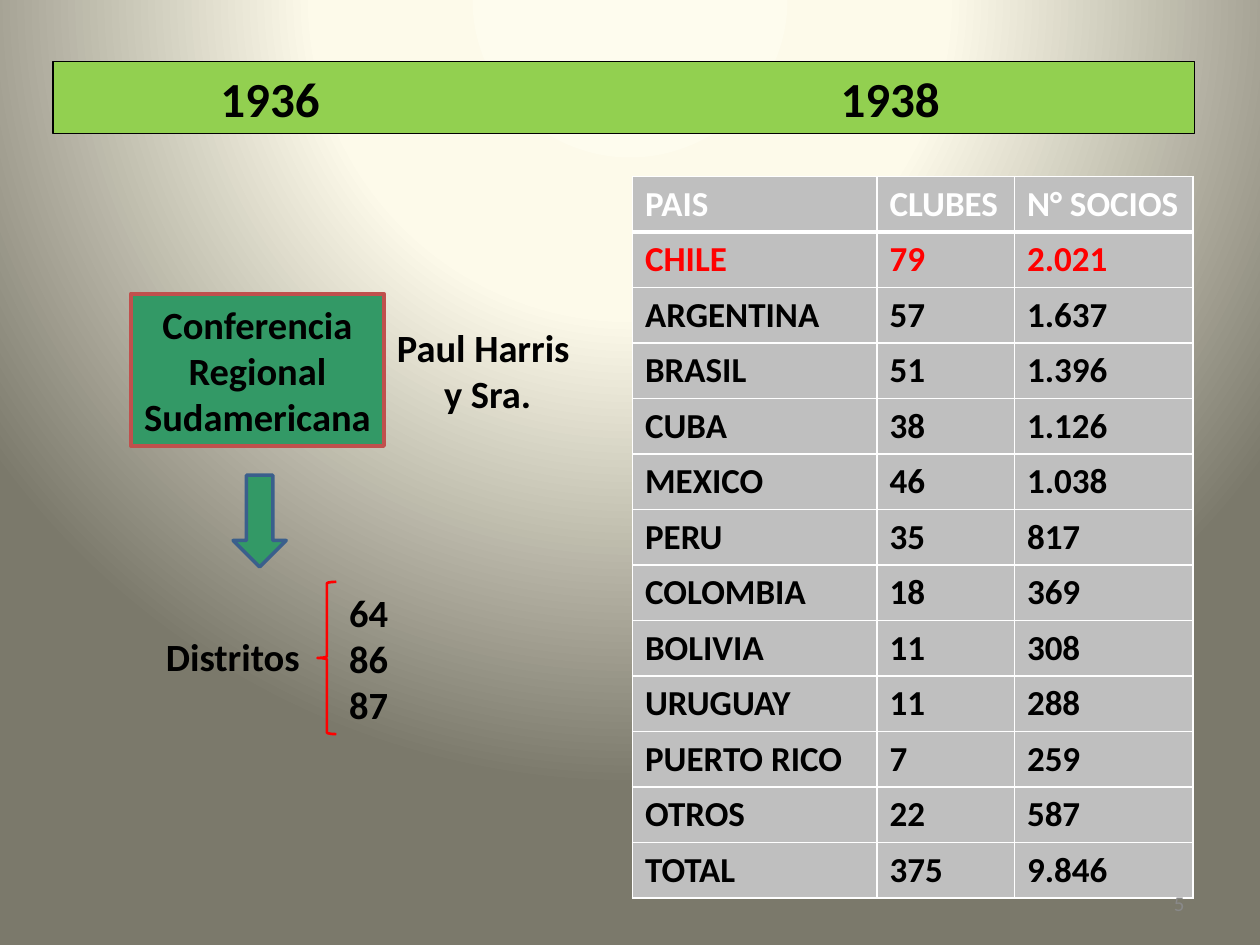
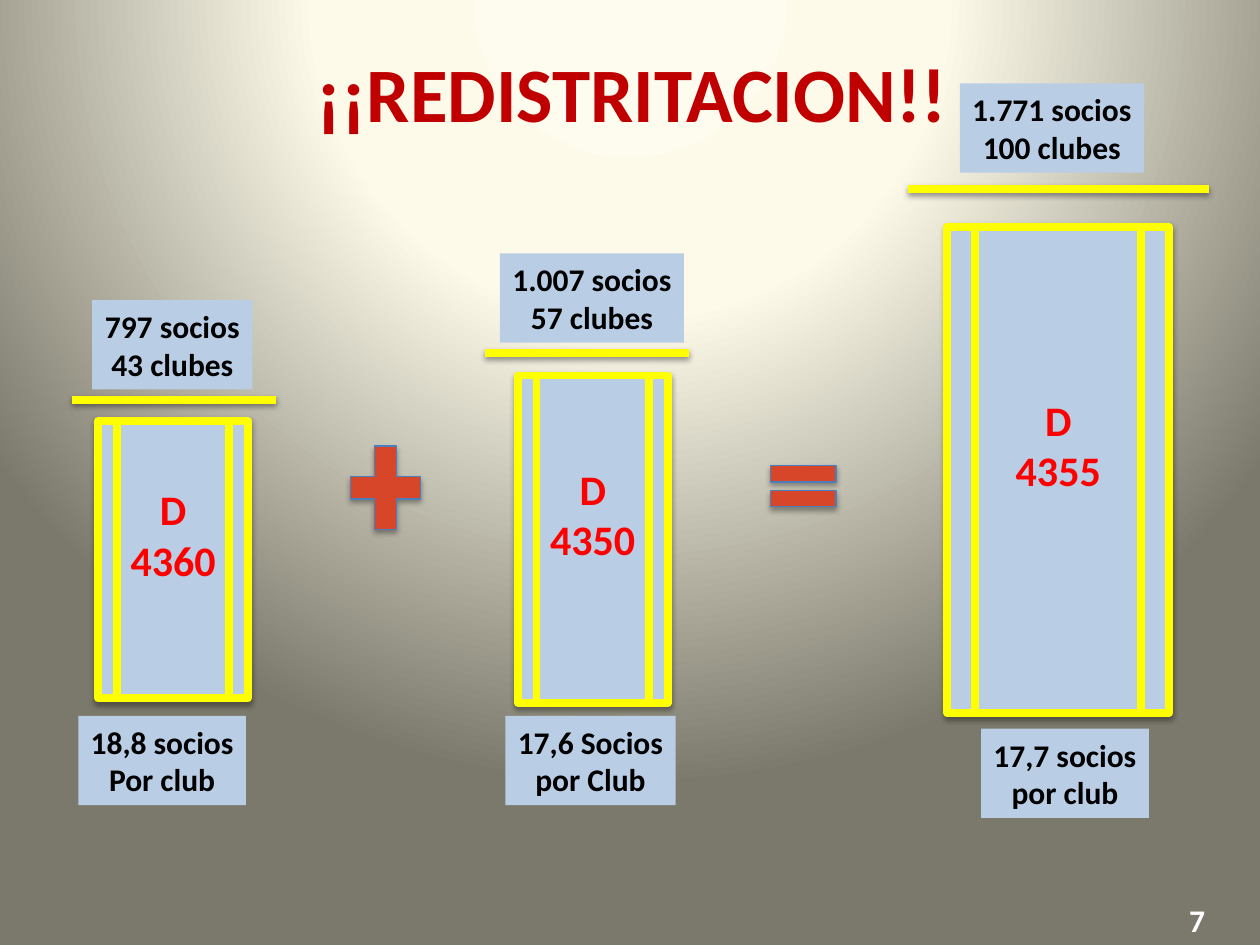
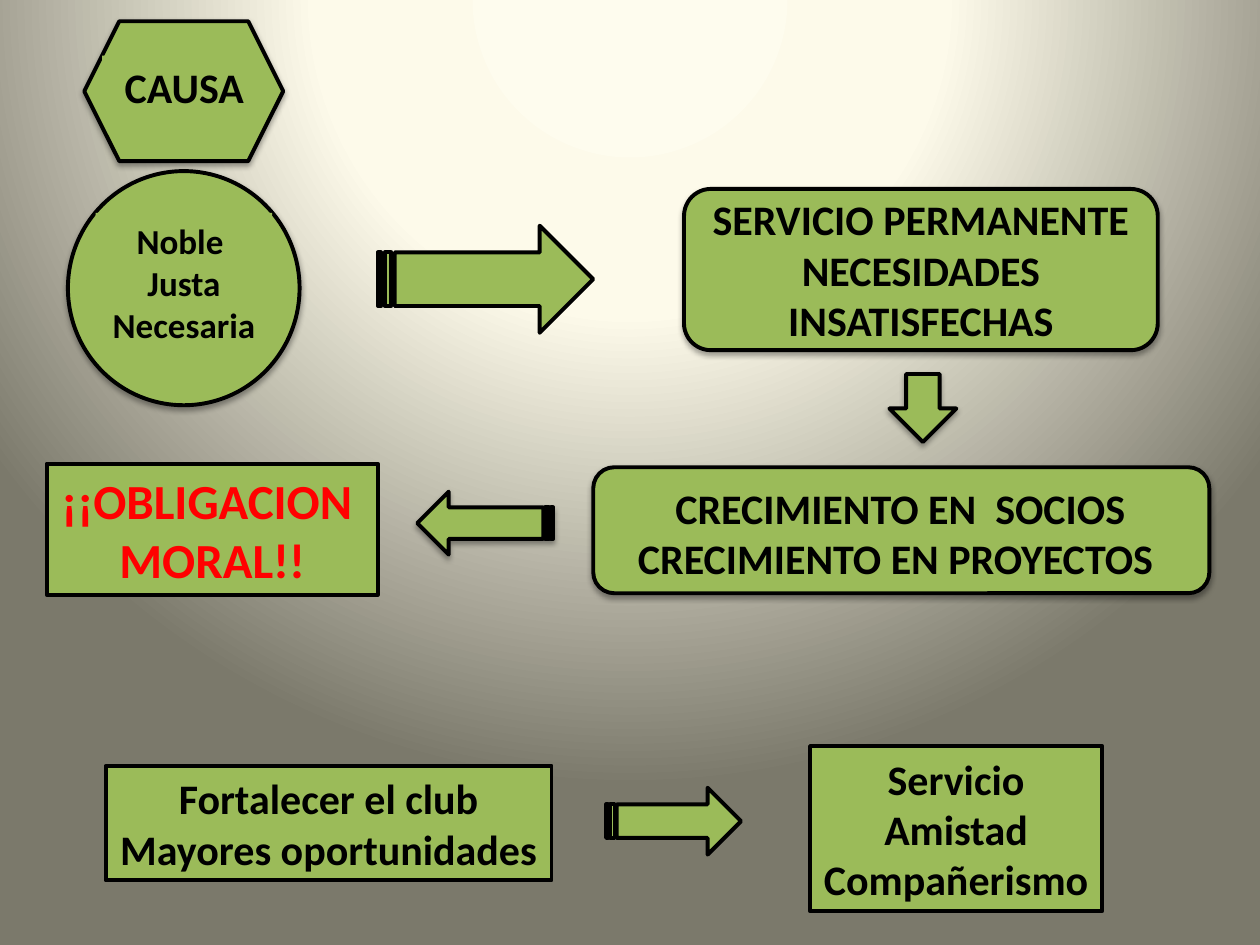
from dataclasses import dataclass

from lxml.etree import SubElement
from pptx import Presentation
from pptx.dml.color import RGBColor
from pptx.enum.shapes import MSO_CONNECTOR, MSO_SHAPE as Preset
from pptx.enum.text import MSO_ANCHOR as Anchor, MSO_AUTO_SIZE, PP_ALIGN as Align
from pptx.oxml import parse_xml
from pptx.oxml.ns import nsdecls, qn
from pptx.util import Cm, Pt

# Shared palette
BLACK = RGBColor(0x00, 0x00, 0x00)
WHITE = RGBColor(0xFF, 0xFF, 0xFF)
RED = RGBColor(0xFF, 0x00, 0x00)
DARK_RED = RGBColor(0xC0, 0x00, 0x00)
BRICK = RGBColor(0xC0, 0x50, 0x4D)
ORANGE = RGBColor(0xD7, 0x46, 0x29)
YELLOW = RGBColor(0xFF, 0xFF, 0x00)
LIME = RGBColor(0x92, 0xD0, 0x50)
OLIVE = RGBColor(0x9B, 0xBB, 0x59)
SEA_GREEN = RGBColor(0x33, 0x99, 0x66)
PALE_BLUE = RGBColor(0xB9, 0xCD, 0xE5)
STEEL_BLUE = RGBColor(0x3A, 0x5F, 0x8C)
SIGN_BLUE = RGBColor(0x4B, 0x7E, 0xBC)
SILVER = RGBColor(0xBF, 0xBF, 0xBF)
GREY = RGBColor(0x89, 0x89, 0x89)
BACKDROP = ((0, "FEFCEE"), (40, "FDFAEA"), (100, "7B796B"))

FONT = {"name": "Calibri", "bold": True}
FRAME = {"auto_size": MSO_AUTO_SIZE.NONE, "vertical_anchor": Anchor.MIDDLE}
TITLE_ONLY, BLANK = 5, 6

# Outlines: colour and width in points
OLIVE_STYLE = {"fill": OLIVE, "outline": (BLACK, 2.25)}
SIGN_STYLE = {"fill": ORANGE, "outline": (SIGN_BLUE, 0.75), "shadow": True}
PILLAR_OUTLINE = (YELLOW, 4.5)


@dataclass
class District:
    number: str
    box: tuple          # left, top, width, height
    rule_top: float
    pillar: tuple       # the rest are relative to the box
    totals: list
    totals_span: tuple  # left, width
    average: list
    average_span: tuple


DISTRICTS = [
    District("4360", (1.45, 6.05, 4.11, 10.18), 2.01, (0.53, 2.44, 3.02, 5.59),
             ["797 socios", "43 clubes"], (0.41, 3.23),
             ["18,8 socios", "Por club"], (0.13, 3.38)),
    District("4350", (9.78, 5.11, 4.11, 11.12), 2.01, (0.66, 2.46, 3.02, 6.6),
             ["1.007 socios", "57 clubes"], (0.3, 3.71),
             ["17,6 Socios", "por Club"], (0.41, 3.43)),
    District("4355", (18.31, 1.68, 6.07, 14.81), 2.13, (0.79, 2.9, 4.47, 9.8),
             ["1.771 socios", "100 clubes"], (1.04, 3.71),
             ["17,7 socios", "por club"], (1.47, 3.38)),
]

CENSUS = [
    ("PAIS", "CLUBES", "N° SOCIOS"),
    ("CHILE", "79", "2.021"),
    ("ARGENTINA", "57", "1.637"),
    ("BRASIL", "51", "1.396"),
    ("CUBA", "38", "1.126"),
    ("MEXICO", "46", "1.038"),
    ("PERU", "35", "817"),
    ("COLOMBIA", "18", "369"),
    ("BOLIVIA", "11", "308"),
    ("URUGUAY", "11", "288"),
    ("PUERTO RICO", "7", "259"),
    ("OTROS", "22", "587"),
    ("TOTAL", "375", "9.846"),
]
CENSUS_COLUMNS = (4.93, 2.77, 3.6)


# Shared helpers
def apply(target, values):
    for attribute, value in values.items():
        setattr(target, attribute, value)


def place(origin, box):
    left, top, width, height = box
    return Cm(origin[0] + left), Cm(origin[1] + top), Cm(width), Cm(height)


def write(frame, lines, size, color=BLACK, align=Align.CENTER, wrap=False):
    apply(frame, {**FRAME, "word_wrap": wrap})
    for index, line in enumerate(lines):
        paragraph = frame.add_paragraph() if index else frame.paragraphs[0]
        paragraph.alignment = align
        run = paragraph.add_run()
        run.text = line
        apply(run.font, {**FONT, "size": Pt(size)})
        run.font.color.rgb = color


def paint(shape, fill=None, outline=None):
    if fill is None:
        shape.fill.background()
    else:
        shape.fill.solid()
        shape.fill.fore_color.rgb = fill
    if outline is None:
        shape.line.fill.background()
    else:
        draw_line(shape.line, outline)


def draw_line(line, outline):
    color, width = outline
    line.color.rgb = color
    line.width = Pt(width)


def cast_shadow(effects, distance, opacity):
    effects.append(parse_xml(
        f'<a:outerShdw {nsdecls("a")} blurRad="40000" dist="{distance}" dir="5400000" '
        f'rotWithShape="0"><a:srgbClr val="000000"><a:alpha val="{opacity}"/>'
        '</a:srgbClr></a:outerShdw>'))


def add_part(slide, origin, preset, box, lines=(), size=24, color=BLACK, wrap=False,
             fill=None, outline=None, shadow=False):
    part = slide.shapes.add_shape(preset, *place(origin, box))
    paint(part, fill, outline)
    part.shadow.inherit = False
    if shadow:
        cast_shadow(part._element.spPr.find(qn("a:effectLst")), 23000, 35000)
    if lines:
        write(part.text_frame, lines, size, color, wrap=wrap)
    return part


def add_label(slide, origin, box, lines, size, color=BLACK, align=Align.CENTER):
    label = slide.shapes.add_textbox(*place(origin, box))
    write(label.text_frame, lines, size, color, align)
    return label


def set_title(slide, box, text, size, color, align=Align.CENTER):
    title = slide.shapes.title
    apply(title, dict(zip(("left", "top", "width", "height"), place((0, 0), box))))
    write(title.text_frame, [text], size, color, align)
    return title


def set_backdrop(master):
    master.background.fill.solid()
    backdrop = master.element.xpath(".//p:bgPr")[0]
    stops = "".join(f'<a:gs pos="{pos * 1000}"><a:srgbClr val="{color}"/></a:gs>'
                    for pos, color in BACKDROP)
    backdrop.replace(backdrop[0], parse_xml(
        f'<a:gradFill {nsdecls("a")} rotWithShape="1"><a:gsLst>{stops}</a:gsLst>'
        '<a:path path="circle"><a:fillToRect l="50000" t="-80000" r="50000" b="180000"/>'
        '</a:path></a:gradFill>'))


# Slide 1: conference and census
def year_band(slide, box):
    band = set_title(slide, box, "\t1936\t1938", 28, BLACK, Align.LEFT)
    paint(band, LIME, (BLACK, 0.75))
    properties = band.text_frame.paragraphs[0]._p.get_or_add_pPr()
    tabs = SubElement(properties, qn("a:tabLst"))
    for position in (3.12, 15.62):
        SubElement(tabs, qn("a:tab"), pos=str(Cm(position)), algn="l")


def conference(slide, origin):
    add_part(slide, origin, Preset.RECTANGLE, (0, 0, 5.1, 3.07),
             ["Conferencia Regional Sudamericana"], 22, wrap=True,
             fill=SEA_GREEN, outline=(BRICK, 2.25))
    add_label(slide, origin, (5.08, 0.48, 4.22, 2.13), ["Paul Harris ", "y Sra."], 22)
    add_part(slide, origin, Preset.DOWN_ARROW, (2.06, 3.66, 1.07, 1.85),
             fill=SEA_GREEN, outline=(STEEL_BLUE, 2))


def first_districts(slide, origin):
    add_label(slide, origin, (0, 0.91, 3.25, 1.19), ["Distritos"], 22)
    add_part(slide, origin, Preset.LEFT_BRACE, (3.33, 0, 0.38, 3.07), outline=(RED, 1.5))
    add_label(slide, origin, (3.71, 0, 1.3, 3.07), ["64", "86", "87"], 22)


def set_borders(cell, bottom_width):
    properties = cell._tc.get_or_add_tcPr()
    for side, width in (("L", 1), ("R", 1), ("T", 1), ("B", bottom_width)):
        properties.append(parse_xml(
            f'<a:ln{side} {nsdecls("a")} w="{Pt(width)}"><a:solidFill>'
            f'<a:srgbClr val="{WHITE}"/></a:solidFill></a:ln{side}>'))


def census_table(slide, origin):
    row_height = 1.07
    box = (0, 0, sum(CENSUS_COLUMNS), row_height * len(CENSUS))
    table = slide.shapes.add_table(len(CENSUS), len(CENSUS_COLUMNS),
                                   *place(origin, box)).table
    for column, width in zip(table.columns, CENSUS_COLUMNS):
        column.width = Cm(width)
    row_colors = {0: WHITE, 1: RED}
    for index, values in enumerate(CENSUS):
        table.rows[index].height = Cm(row_height)
        for cell, value in zip(table.rows[index].cells, values):
            set_borders(cell, 1 if index else 3)
            cell.fill.solid()
            cell.fill.fore_color.rgb = SILVER
            run = cell.text_frame.paragraphs[0].add_run()
            run.text = value
            apply(run.font, {**FONT, "size": Pt(20)})
            run.font.color.rgb = row_colors.get(index, BLACK)


def census_slide(slide):
    year_band(slide, (1.07, 1.24, 23.01, 1.45))
    conference(slide, (2.64, 5.92))
    first_districts(slide, (3.07, 11.73))
    census_table(slide, (12.75, 3.56))
    page = add_label(slide, (0, 0), (18.21, 17.7, 5.92, 1.02), ["5"], 12, GREY, Align.RIGHT)
    page.text_frame.paragraphs[0].runs[0].font.bold = False


# Slide 2: two districts become one
def district_pillar(slide, district):
    left, top, width, height = district.box
    origin = (left, top)
    label_height = 1.8
    pillar = add_part(slide, origin, Preset.FLOWCHART_PREDEFINED_PROCESS, district.pillar,
                      ["D", district.number], 24, RED, wrap=True,
                      fill=PALE_BLUE, outline=PILLAR_OUTLINE, shadow=True)
    pillar.text_frame.margin_bottom = Cm(1.16)

    rule_top = Cm(top + district.rule_top)
    rule = slide.shapes.add_connector(MSO_CONNECTOR.STRAIGHT, Cm(left), rule_top,
                                      Cm(left + width), rule_top)
    draw_line(rule.line, PILLAR_OUTLINE)
    cast_shadow(SubElement(rule._element.spPr, qn("a:effectLst")), 20000, 38000)

    for lines, (offset, span), label_top in (
            (district.average, district.average_span, height - label_height),
            (district.totals, district.totals_span, 0)):
        add_part(slide, origin, Preset.RECTANGLE, (offset, label_top, span, label_height),
                 lines, 18, fill=PALE_BLUE)


def merger_slide(slide):
    set_title(slide, (6.07, 0.79, 13.34, 2.13), "¡¡REDISTRITACION!!", 44, DARK_RED)
    add_label(slide, (0, 0), (22.89, 18.03, 2.49, 1.02), ["7"], 18, WHITE)
    add_part(slide, (0, 0), Preset.MATH_PLUS, (6.81, 8.69, 1.93, 2.29), **SIGN_STYLE)
    add_part(slide, (0, 0), Preset.MATH_EQUAL, (15.29, 9.09, 1.8, 1.42), **SIGN_STYLE)
    for district in DISTRICTS:
        district_pillar(slide, district)


# Slide 3: from the cause to the obligation
def cause(slide, origin):
    add_part(slide, origin, Preset.OVAL, (0, 3.02, 4.67, 4.72), shadow=True, **OLIVE_STYLE)
    add_part(slide, origin, Preset.RECTANGLE, (0.56, 3.86, 3.56, 2.82),
             ["Noble ", "Justa", "Necesaria"], 20, wrap=True, fill=OLIVE)
    add_part(slide, origin, Preset.HEXAGON, (0.33, 0, 4.01, 2.82), shadow=True, **OLIVE_STYLE)
    add_part(slide, origin, Preset.RECTANGLE, (0.69, 0.69, 3.12, 1.27), [" CAUSA"], fill=OLIVE)
    add_part(slide, origin, Preset.STRIPED_RIGHT_ARROW, (6.25, 4.12, 4.34, 2.16), **OLIVE_STYLE)


def service(slide, origin):
    add_part(slide, origin, Preset.ROUNDED_RECTANGLE, (0, 0, 9.55, 3.25),
             ["SERVICIO PERMANENTE", "NECESIDADES INSATISFECHAS"], wrap=True,
             shadow=True, **OLIVE_STYLE)
    add_part(slide, origin, Preset.DOWN_ARROW, (4.14, 3.73, 1.35, 1.37),
             shadow=True, **OLIVE_STYLE)


def growth(slide, origin):
    add_part(slide, origin, Preset.RECTANGLE, (0, 0, 6.68, 2.64),
             ["¡¡OBLIGACION ", "MORAL!!"], 28, RED, **OLIVE_STYLE)
    arrow = add_part(slide, origin, Preset.STRIPED_RIGHT_ARROW, (7.47, 0.56, 2.74, 1.27),
                     shadow=True, **OLIVE_STYLE)
    arrow.rotation = 180
    add_part(slide, origin, Preset.ROUNDED_RECTANGLE, (11.02, 0.07, 12.42, 2.54),
             shadow=True, **OLIVE_STYLE)
    add_part(slide, origin, Preset.RECTANGLE, (11.51, 0.23, 11.4, 2.31),
             ["CRECIMIENTO EN  SOCIOS", "CRECIMIENTO EN PROYECTOS "], fill=OLIVE)


def club_benefits(slide, origin):
    add_part(slide, origin, Preset.RECTANGLE, (0, 0.4, 8.99, 2.31),
             ["Fortalecer el club", "Mayores oportunidades"], **OLIVE_STYLE)
    add_part(slide, origin, Preset.STRIPED_RIGHT_ARROW, (10.09, 0.84, 2.72, 1.35), **OLIVE_STYLE)
    add_part(slide, origin, Preset.RECTANGLE, (14.2, 0, 5.89, 3.33),
             ["Servicio", "Amistad", "Compañerismo"], **OLIVE_STYLE)


def cause_slide(slide):
    cause(slide, (1.37, 0.43))
    service(slide, (13.79, 3.81))
    growth(slide, (0.94, 9.35))
    club_benefits(slide, (2.13, 15.04))


def main():
    deck = Presentation()
    deck.slide_width, deck.slide_height = Cm(25.4), Cm(19.05)
    set_backdrop(deck.slide_master)
    for build, layout in ((census_slide, TITLE_ONLY), (merger_slide, TITLE_ONLY),
                          (cause_slide, BLANK)):
        build(deck.slides.add_slide(deck.slide_layouts[layout]))
    deck.save("out.pptx")


if __name__ == "__main__":
    main()
